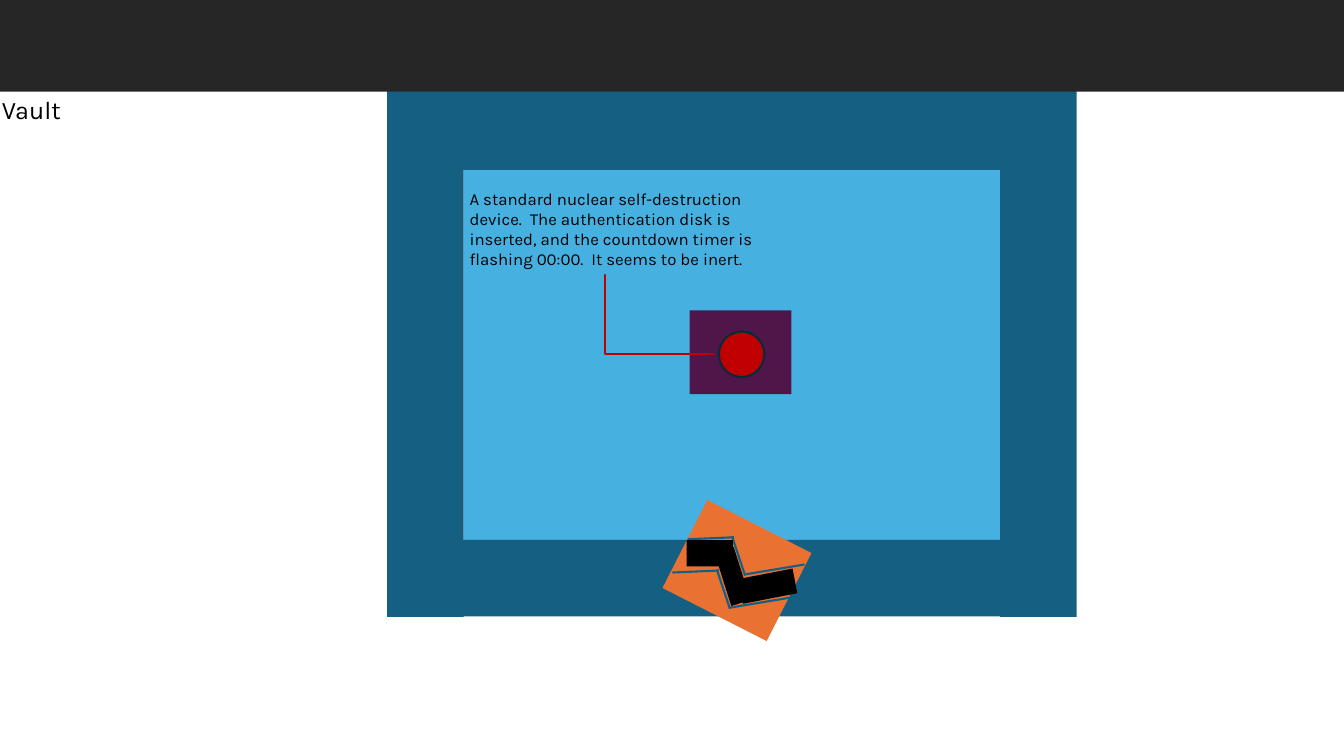
from dataclasses import dataclass

from lxml.etree import SubElement
from pptx import Presentation
from pptx.dml.color import RGBColor
from pptx.enum.shapes import MSO_CONNECTOR, MSO_SHAPE
from pptx.enum.text import MSO_AUTO_SIZE
from pptx.oxml.ns import qn
from pptx.util import Inches, Pt


@dataclass(frozen=True)
class Theme:
    font: str = "Karla"
    ink: str = "000000"
    wall: str = "156082"
    floor: str = "46B1E1"
    base: str = "501649"
    bomb: str = "C00000"
    rim: str = "092A39"
    crate: str = "E97132"
    bar: str = "262626"
    title: float = 18
    note: float = 12
    line: float = 1.5


class Board:
    """Places parts on a grid of tenths of an inch."""

    def __init__(self, deck, theme):
        self.theme = theme
        self.slide = deck.slides.add_slide(deck.slide_layouts[6])
        self.shapes = self.slide.shapes

    def grid(self, *cells):
        return [Inches(cell / 10) for cell in cells]

    def stroke(self, line, color):
        line.color.rgb = RGBColor.from_string(color)
        line.width = Pt(self.theme.line)

    def block(self, box, fill, kind=MSO_SHAPE.RECTANGLE, rim=None, turn=0):
        shape = self.shapes.add_shape(kind, *self.grid(*box))
        shape.shadow.inherit = False
        shape.rotation = turn
        shape.fill.solid()
        shape.fill.fore_color.rgb = RGBColor.from_string(fill)
        if rim:
            self.stroke(shape.line, rim)
        else:
            shape.line.fill.background()

    def link(self, start, end, color, kind=MSO_CONNECTOR.STRAIGHT, bend=None):
        line = self.shapes.add_connector(kind, *self.grid(*start, *end))
        self.stroke(line.line, color)
        props = line._element.spPr
        SubElement(props, qn("a:effectLst"))
        if bend is not None:
            guides = props.find(qn("a:prstGeom")).get_or_add_avLst()
            SubElement(guides, qn("a:gd"), name="adj1", fmla=f"val {bend}")

    def text(self, box, words, size):
        frame = self.shapes.add_textbox(*self.grid(*box)).text_frame
        form = {"word_wrap": True, "auto_size": MSO_AUTO_SIZE.SHAPE_TO_FIT_TEXT}
        for name, value in form.items():
            setattr(frame, name, value)
        run = frame.paragraphs[0].add_run()
        run.text = words
        for name, value in {"name": self.theme.font, "size": Pt(size)}.items():
            setattr(run.font, name, value)
        run.font.color.rgb = RGBColor.from_string(self.theme.ink)


def main():
    deck = Presentation()
    deck.slide_width, deck.slide_height = Inches(13.33), Inches(7.5)
    theme = Theme()
    board = Board(deck, theme)

    # Vault floor and the stand of the device
    board.block((46, 13.8, 53.7, 42.9), theme.floor)
    board.block((68.4, 30.8, 10.1, 8.3), theme.base)

    # Side walls, then the bottom wall
    for left in (38.4, 99.2):
        board.block((left, 8.8, 7.6, 52.4), theme.wall)
    board.block((43.65, 53.55, 57.5, 7.6), theme.wall)

    # Top wall in three overlapping parts
    for left, width in ((43.45, 27.9), (77.85, 27.9), (53.05, 35.9)):
        board.block((left, 8.85, width, 8), theme.wall)

    # Broken door: a tilted crate, two parallel edges and the gap between
    board.block((67.3, 51.7, 11.6, 9.8), theme.crate, turn=27)
    edge = (
        ((78.3, 59.3), (72.3, 60.3)),
        ((66.7, 56.8), (71.3, 56.6)),
        ((71.1, 56.5), (72.4, 60.4)),
    )
    for across, down in ((0, 0), (1.5, -3.3)):
        for pair in edge:
            start, end = ((x + across, y + down) for x, y in pair)
            board.link(start, end, theme.wall)
    for box, turn in (
        ((68.1, 53.6, 4.6, 2.6), 0),
        ((69.9, 56.2, 5.5, 2), 72.4),
        ((73.4, 56.9, 5.5, 2.5), 349),
    ):
        board.block(box, theme.ink, turn=turn)

    # Device with its note and pointer
    board.block((71.3, 32.9, 4.5, 4.5), theme.bomb, MSO_SHAPE.OVAL, theme.rim)
    board.text(
        (45.6, 18.2, 30.7, 9.1),
        "A standard nuclear self-destruction device.  The authentication disk "
        "is inserted, and the countdown timer is flashing 00:00.  "
        "It seems to be inert.",
        theme.note,
    )
    board.link((59.9, 27.3), (70.8, 35.1), theme.bomb, MSO_CONNECTOR.ELBOW, 700)

    # Room name and top bar
    board.text((-0.8, 8.9, 23.1, 4), "Vault", theme.title)
    board.block((0, -0.3, 133.3, 9.4), theme.bar)

    deck.save("out.pptx")


if __name__ == "__main__":
    main()
